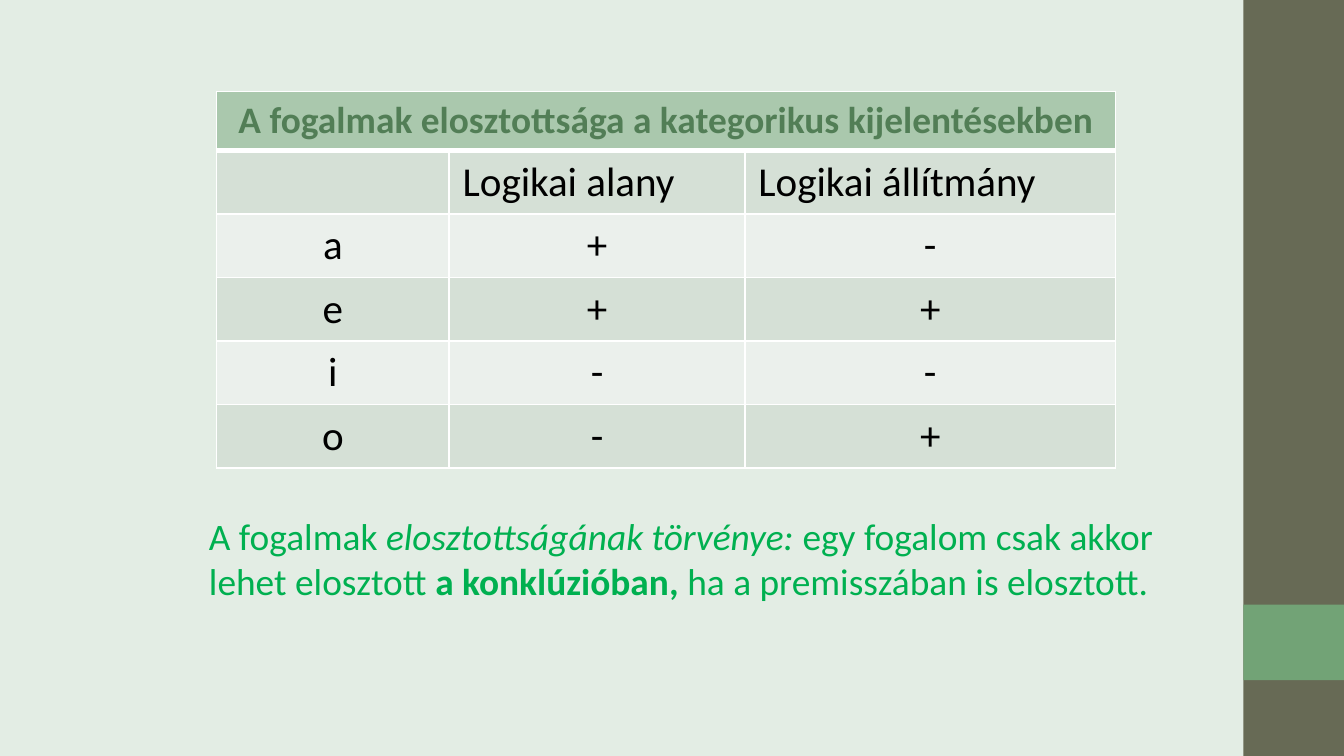
"""Build a slide on the distribution of terms in categorical statements."""
from lxml import etree
from pptx import Presentation
from pptx import util as u
from pptx.dml import color
from pptx.enum import shapes, text
from pptx.oxml import ns

FONT = "Calibri"
COLORS = {
    "background": "E3EDE4",
    "sidebar": "676A55",
    "accent": "72A376",
    "header": "AAC8AD",
    "header_text": "527E56",
    "band_dark": "D5E0D6",
    "band_light": "EBF0EC",
    "border": "FFFFFF",
    "body": "000000",
    "law": "00B050",
}
TITLE = "A fogalmak elosztottsága a kategorikus kijelentésekben"
ROWS = [
    ("", "Logikai alany", "Logikai állítmány"),
    ("a", "+", "-"),
    ("e", "+", "+"),
    ("i", "-", "-"),
    ("o", "-", "+"),
]
COLUMN_WIDTHS = (4.4, 5.59, 7.0)
HEADER_HEIGHT, ROW_HEIGHT = 1.07, 1.19
LAW = [
    ("A fogalmak ", False, False),
    ("elosztottságának törvénye: ", False, True),
    ("egy fogalom csak akkor lehet elosztott ", False, False),
    ("a konklúzióban, ", True, False),
    ("ha a premisszában is elosztott.", False, False),
]


def paint(fill, name):
    fill.solid()
    fill.fore_color.rgb = color.RGBColor.from_string(COLORS[name])


def style(span, size, name, bold=False, italic=False):
    span.font.name = FONT
    span.font.size = u.Pt(size)
    span.font.bold = bold
    span.font.italic = italic
    span.font.color.rgb = color.RGBColor.from_string(COLORS[name])


def add_bar(page, left, top, width, height, name):
    bar = page.shapes.add_shape(
        shapes.MSO_SHAPE.RECTANGLE, u.Cm(left), u.Cm(top), u.Cm(width), u.Cm(height))
    bar.shadow.inherit = False
    paint(bar.fill, name)
    bar.line.fill.background()


def set_borders(cell, top=1, bottom=1):
    properties = cell._tc.get_or_add_tcPr()
    for side, points in (("L", 1), ("R", 1), ("T", top), ("B", bottom)):
        line = etree.SubElement(properties, ns.qn(f"a:ln{side}"), w=str(u.Pt(points)))
        fill = etree.SubElement(line, ns.qn("a:solidFill"))
        etree.SubElement(fill, ns.qn("a:srgbClr"), val=COLORS["border"])


def fill_cell(cell, words, fill, size, name, centred, bold=False):
    paint(cell.fill, fill)
    cell.vertical_anchor = text.MSO_ANCHOR.TOP
    para = cell.text_frame.paragraphs[0]
    para.text = words
    para.alignment = text.PP_ALIGN.CENTER if centred else text.PP_ALIGN.LEFT
    for span in para.runs:
        style(span, size, name, bold)


def add_distribution_table(page):
    height = HEADER_HEIGHT + ROW_HEIGHT * len(ROWS)
    table = page.shapes.add_table(
        len(ROWS) + 1, len(COLUMN_WIDTHS), u.Cm(4.09), u.Cm(1.73),
        u.Cm(sum(COLUMN_WIDTHS)), u.Cm(height)).table
    for column, width in zip(table.columns, COLUMN_WIDTHS):
        column.width = u.Cm(width)
    for index, row in enumerate(table.rows):
        row.height = u.Cm(ROW_HEIGHT if index else HEADER_HEIGHT)
        for cell in row.cells:
            set_borders(cell, 3 if index == 1 else 1, 1 if index else 3)
    table.cell(0, 0).merge(table.cell(0, len(COLUMN_WIDTHS) - 1))
    fill_cell(table.cell(0, 0), TITLE, "header", 20, "header_text", True, True)
    for index, row in enumerate(ROWS, start=1):
        band = "band_dark" if index % 2 else "band_light"
        for column, words in enumerate(row):
            fill_cell(table.cell(index, column), words, band, 22, "body", index > 1)


def add_law(page):
    box = page.shapes.add_textbox(u.Cm(3.7), u.Cm(9.58), u.Cm(18.8), u.Cm(1.96))
    frame = box.text_frame
    frame.word_wrap = True
    frame.auto_size = text.MSO_AUTO_SIZE.SHAPE_TO_FIT_TEXT
    para = frame.paragraphs[0]
    for words, bold, italic in LAW:
        span = para.add_run()
        span.text = words
        style(span, 20, "law", bold, italic)


def main():
    deck = Presentation()
    deck.slide_width, deck.slide_height = u.Cm(25.4), u.Cm(14.29)
    page = deck.slides.add_slide(deck.slide_layouts[6])
    paint(page.background.fill, "background")
    add_bar(page, 23.5, 0, 1.9, 14.29, "sidebar")
    add_bar(page, 23.5, 11.43, 1.9, 1.43, "accent")
    add_distribution_table(page)
    add_law(page)
    deck.save("out.pptx")


if __name__ == "__main__":
    main()
